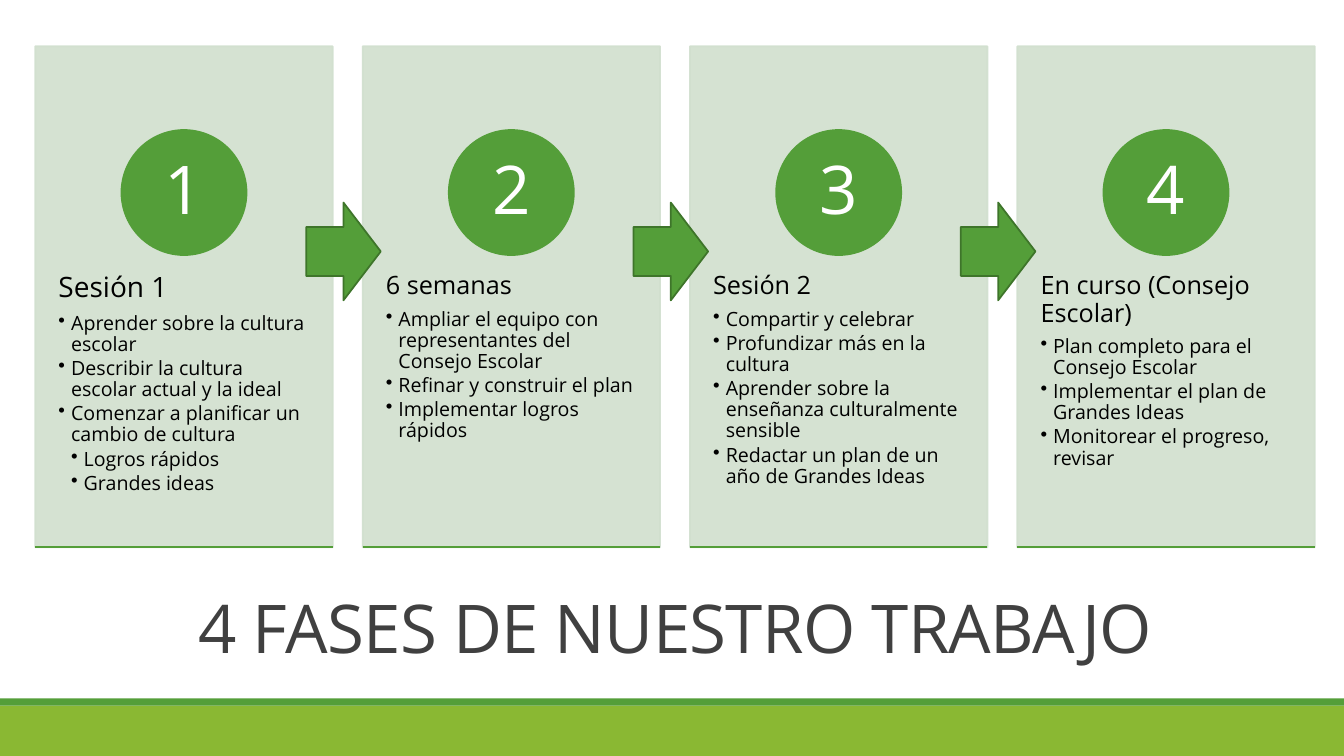
from pptx import Presentation
from pptx import util as u
from pptx.dml.color import RGBColor
from pptx.enum import shapes, text
from pptx.oxml import parse_xml
from pptx.oxml.ns import nsdecls, qn
from lxml import etree

TITLE = "4 FASES DE NUESTRO TRABAJO"
PHASES = [
    ("Sesión 1", 20, [
        (1, "Aprender sobre la cultura escolar"),
        (1, "Describir la cultura escolar actual y la ideal"),
        (1, "Comenzar a planificar un cambio de cultura"),
        (2, "Logros rápidos"),
        (2, "Grandes ideas"),
    ]),
    ("6 semanas", 18, [
        (1, "Ampliar el equipo con representantes del Consejo Escolar"),
        (1, "Refinar y construir el plan"),
        (1, "Implementar logros rápidos"),
    ]),
    ("Sesión 2", 18, [
        (1, "Compartir y celebrar"),
        (1, "Profundizar más en la cultura"),
        (1, "Aprender sobre la enseñanza culturalmente sensible"),
        (1, "Redactar un plan de un año de Grandes Ideas"),
    ]),
    ("En curso (Consejo Escolar)", 18, [
        (1, "Plan completo para el Consejo Escolar"),
        (1, "Implementar el plan de Grandes Ideas"),
        (1, "Monitorear el progreso, revisar"),
    ]),
]

FONT = "Open Sans"
GREEN = RGBColor(0x54, 0x9E, 0x39)
DARK_GREEN = RGBColor(0x3E, 0x75, 0x2A)
LIME = RGBColor(0x8A, 0xB8, 0x33)
PALE = RGBColor(0xD1, 0xDF, 0xCE)
GREY = RGBColor(0x40, 0x40, 0x40)
BLACK = RGBColor(0, 0, 0)
WHITE = RGBColor(255, 255, 255)

LEFT, LAST_LEFT, TOP = 0.35, 10.09, 0.46
CARD_W, CARD_H = 2.95, 4.97
PITCH = (LAST_LEFT - LEFT) / (len(PHASES) - 1)
CIRCLE, CIRCLE_TOP = 1.24, 1.29
TEXT_TOP, TEXT_H = 2.35, 2.98
ARROW_TOP, ARROW_W, ARROW_H, ARROW_LEAD = 2.01, 0.74, 0.97, 0.56
INDENT = 0.125
LINE_WIDTH = u.Pt(1.25)

deck = Presentation()
deck.slide_width, deck.slide_height = u.Inches(13.33), u.Inches(7.5)
page = deck.slides.add_slide(deck.slide_layouts[6])


def inches(*lengths):
    return [u.Inches(length) for length in lengths]


def add_block(kind, *place, fill, line=None, alpha=None):
    block = page.shapes.add_shape(kind, *inches(*place))
    block.shadow.inherit = False
    block.fill.solid()
    block.fill.fore_color.rgb = fill
    if line is None:
        block.line.fill.background()
    else:
        block.line.color.rgb = line
        block.line.width = LINE_WIDTH
    if alpha is not None:
        for color in block._element.spPr.iter(qn("a:srgbClr")):
            etree.SubElement(color, qn("a:alpha"), val=str(alpha * 1000))
    return block


def set_frame(frame, anchor, side, top):
    frame.word_wrap = True
    frame.vertical_anchor = anchor
    frame.margin_left = frame.margin_right = u.Inches(side)
    frame.margin_top = frame.margin_bottom = u.Inches(top)


def write(para, words, size, color=BLACK, align=text.PP_ALIGN.LEFT,
          spacing=0.9, after=0, level=0, tracking=None):
    para.alignment = align
    para.line_spacing = spacing
    para.space_after = u.Pt(after)
    span = para.add_run()
    span.text = words
    span.font.name, span.font.size = FONT, u.Pt(size)
    span.font.color.rgb = color
    if tracking is not None:
        span._r.get_or_add_rPr().set("spc", str(tracking))
    if level:
        para.level = level
        props = para._p.get_or_add_pPr()
        props.set("marL", str(u.Inches(INDENT * level)))
        props.set("indent", str(-u.Inches(INDENT)))
        props.append(parse_xml(f'<a:buChar {nsdecls("a")} char="•"/>'))


def add_phase(number, left, heading, heading_size, points):
    add_block(shapes.MSO_SHAPE.RECTANGLE, left, TOP, CARD_W, CARD_H,
              fill=PALE, line=PALE, alpha=90)
    box = page.shapes.add_textbox(*inches(left, TEXT_TOP, CARD_W, TEXT_H))
    frame = box.text_frame
    set_frame(frame, text.MSO_ANCHOR.TOP, 0.23, 0.36)
    write(frame.paragraphs[0], heading, heading_size, after=heading_size * 0.35)
    for level, words in points:
        write(frame.add_paragraph(), words, 14, after=2.1, level=level)

    circle = add_block(shapes.MSO_SHAPE.OVAL, left + (CARD_W - CIRCLE) / 2,
                       CIRCLE_TOP, CIRCLE, CIRCLE, fill=GREEN, line=GREEN)
    set_frame(circle.text_frame, text.MSO_ANCHOR.MIDDLE, 0.1, 0.01)
    write(circle.text_frame.paragraphs[0], str(number), 48, color=WHITE,
          align=text.PP_ALIGN.CENTER)

    bottom = TOP + CARD_H
    rule = page.shapes.add_connector(
        shapes.MSO_CONNECTOR.STRAIGHT, *inches(left, bottom, left + CARD_W, bottom))
    rule.line.color.rgb = GREEN
    rule.line.width = LINE_WIDTH
    etree.SubElement(rule._element.spPr, qn("a:effectLst"))


add_block(shapes.MSO_SHAPE.RECTANGLE, 0, 7, 13.33, 0.5, fill=LIME)
add_block(shapes.MSO_SHAPE.RECTANGLE, 0, 6.93, 13.33, 0.07, fill=GREEN)

title = page.shapes.add_textbox(*inches(1.2, 5.63, 11, 1.3))
set_frame(title.text_frame, text.MSO_ANCHOR.MIDDLE, 0.2, 0.2)
write(title.text_frame.paragraphs[0], TITLE, 48, color=GREY,
      align=text.PP_ALIGN.CENTER, spacing=0.85, tracking=-50)

card_lefts = [LEFT + index * PITCH for index in range(len(PHASES))]
for number, (left, phase) in enumerate(zip(card_lefts, PHASES), start=1):
    add_phase(number, left, *phase)

for left in card_lefts[1:]:
    add_block(shapes.MSO_SHAPE.RIGHT_ARROW, left - ARROW_LEAD, ARROW_TOP,
              ARROW_W, ARROW_H, fill=GREEN, line=DARK_GREEN)

deck.save("out.pptx")
